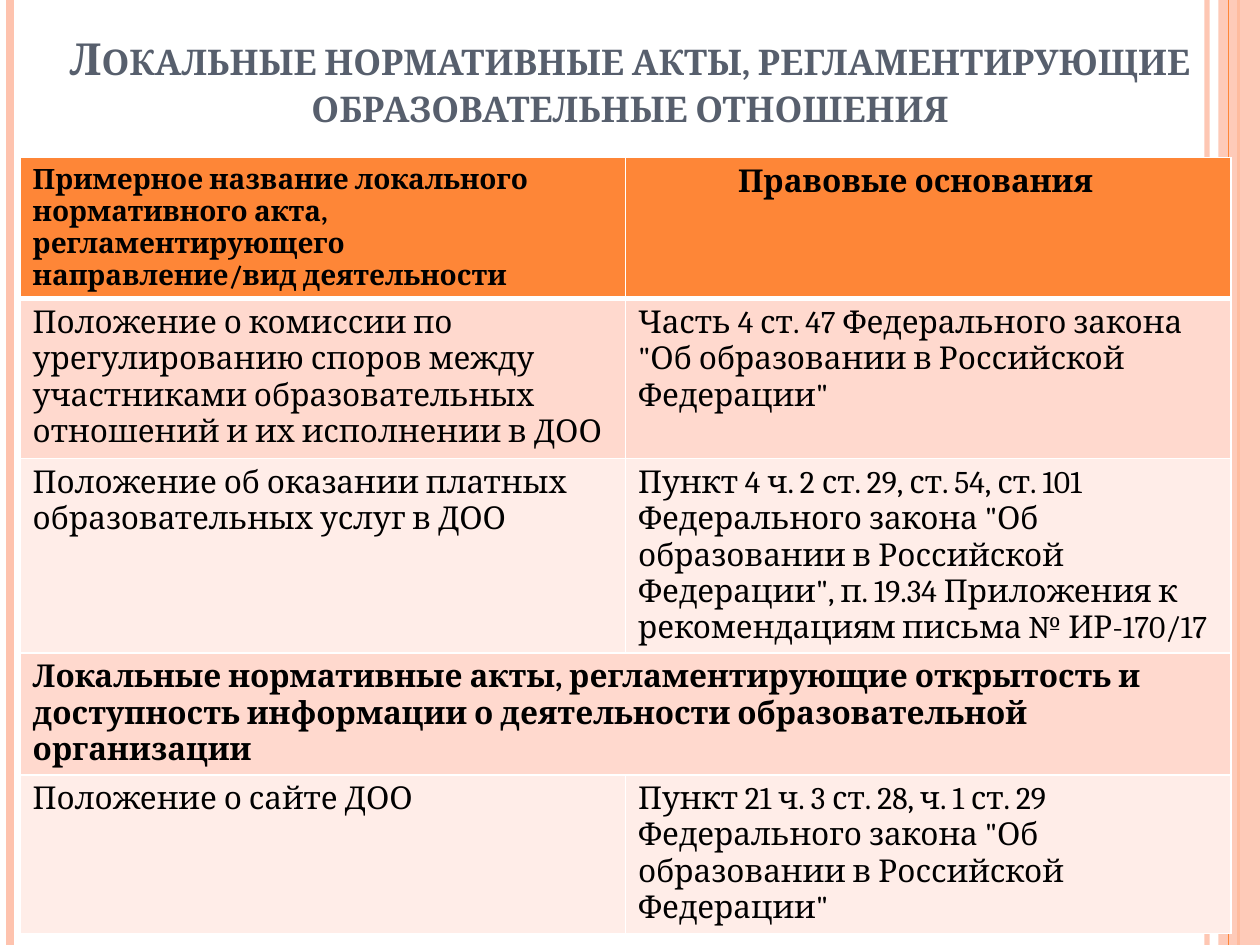
from dataclasses import dataclass
from lxml import etree
from pptx import Presentation
from pptx.dml.color import RGBColor
from pptx.enum.shapes import MSO_CONNECTOR, MSO_SHAPE
from pptx.enum.text import MSO_ANCHOR, PP_ALIGN
from pptx.oxml.ns import qn
from pptx.util import Inches, Pt

LINE = MSO_CONNECTOR.STRAIGHT
RECT = MSO_SHAPE.RECTANGLE
LOW = MSO_ANCHOR.BOTTOM
LEFT, MID = PP_ALIGN.LEFT, PP_ALIGN.CENTER
WIDE, HIGH = 10, 7.5


@dataclass(frozen=True)
class Theme:
    font: str = "Cambria"
    title: str = "575F6D"
    ink: str = "000000"
    edge: str = "FFFFFF"
    main: str = "FE8637"
    pale: str = "FEC3AE"
    odd: str = "FFD9CE"
    even: str = "FFEDE8"
    title_size: float = 25.2
    head_size: int = 16
    body_size: int = 18


THEME = Theme()

# Position, colour, width in points, opacity in percent
RAILS = [
    (9.58, THEME.pale, 3, 93),
    (0.08, THEME.pale, 4.5, 100),
    (9.83, THEME.main, 1.5, 100),
]
FRONT = (9.75, THEME.main, 0.75, 100)

TITLE = "Локальные нормативные акты, регламентирующие образовательные отношения"
HEADS = [
    "Примерное название локального нормативного акта, регламентирующего "
    "направление/вид деятельности",
    "Правовые основания",
]
ROWS = [
    ["Положение о комиссии по урегулированию споров между участниками "
     "образовательных отношений и их исполнении в ДОО",
     'Часть 4 ст. 47 Федерального закона "Об образовании в Российской Федерации"'],
    ["Положение об оказании платных образовательных услуг в ДОО",
     'Пункт 4 ч. 2 ст. 29, ст. 54, ст. 101 Федерального закона "Об образовании '
     'в Российской Федерации", п. 19.34 Приложения к рекомендациям письма '
     '№ ИР-170/17'],
    ["Локальные нормативные акты, регламентирующие открытость и доступность "
     "информации о деятельности образовательной организации"],
    ["Положение о сайте ДОО",
     'Пункт 21 ч. 3 ст. 28, ч. 1 ст. 29 Федерального закона "Об образовании '
     'в Российской Федерации"'],
]
HEIGHTS = [1.11, 1.27, 1.54, 0.96, 1.26]


def rgb(code):
    return RGBColor.from_string(code)


def style(font, size, color, bold):
    values = {"name": THEME.font, "size": Pt(size), "bold": bold}
    for key, value in values.items():
        setattr(font, key, value)
    font.color.rgb = rgb(color)


def fade(shape, share):
    """Set the opacity, in percent, of the shape's first solid colour."""
    color = next(shape.element.spPr.iter(qn("a:srgbClr")))
    etree.SubElement(color, qn("a:alpha"), val=str(share * 1000))


def add_rail(slide, x, color, width, share):
    rail = slide.shapes.add_connector(
        LINE, Inches(x), 0, Inches(x), Inches(HIGH))
    rail.line.color.rgb = rgb(color)
    rail.line.width = Pt(width)
    fade(rail, share)
    etree.SubElement(rail.element.spPr, qn("a:effectLst"))


def add_band(slide):
    left = 9.67
    band = slide.shapes.add_shape(
        RECT, Inches(left), 0, Inches(WIDE - left), Inches(HIGH))
    band.shadow.inherit = False
    band.fill.solid()
    band.fill.fore_color.rgb = rgb(THEME.pale)
    band.line.fill.background()
    fade(band, 87)


def set_title(slide):
    title = slide.shapes.title
    place = {"left": 0, "top": 0.08, "width": WIDE, "height": 1.02}
    for key, value in place.items():
        setattr(title, key, Inches(value))
    frame = title.text_frame
    frame.text = TITLE
    frame.word_wrap = True
    frame.vertical_anchor = LOW
    line = frame.paragraphs[0]
    line.alignment = MID
    line.line_spacing = 0.9
    style(line.runs[0].font, THEME.title_size, THEME.title, True)
    for props in title.element.iter(qn("a:rPr")):
        props.set("cap", "small")


def edge_cell(cell, base):
    """Draw the four borders, the bottom one base points wide."""
    props = cell._tc.get_or_add_tcPr()
    sides = {"lnL": 1, "lnR": 1, "lnT": 1, "lnB": base}
    for spot, (side, width) in enumerate(sides.items()):
        line = etree.Element(qn(f"a:{side}"), w=str(int(Pt(width))))
        fill = etree.SubElement(line, qn("a:solidFill"))
        etree.SubElement(fill, qn("a:srgbClr"), val=THEME.edge)
        props.insert(spot, line)


def fill_cell(cell, text, fill, size, bold, align=LEFT):
    cell.fill.solid()
    cell.fill.fore_color.rgb = rgb(fill)
    cell.text = text
    line = cell.text_frame.paragraphs[0]
    line.alignment = align
    style(line.runs[0].font, size, THEME.ink, bold)


def add_acts(slide):
    frame = slide.shapes.add_table(
        len(HEIGHTS), len(HEADS), Inches(0.16), Inches(1.25),
        Inches(9.61), Inches(sum(HEIGHTS)))
    table = frame.table
    for row, height in zip(table.rows, HEIGHTS):
        row.height = Inches(height)
    sizes = [THEME.head_size, THEME.body_size]
    for col, (text, size, align) in enumerate(zip(HEADS, sizes, [LEFT, MID])):
        cell = table.cell(0, col)
        fill_cell(cell, text, THEME.main, size, True, align)
        edge_cell(cell, 3)
    table.cell(0, 1).margin_right = Inches(0.3)
    for num, texts in enumerate(ROWS, 1):
        whole = len(texts) == 1
        if whole:
            table.cell(num, 0).merge(table.cell(num, 1))
        fill = THEME.odd if num % 2 else THEME.even
        for col, text in enumerate(texts):
            cell = table.cell(num, col)
            fill_cell(cell, text, fill, THEME.body_size, whole)
            edge_cell(cell, 1)


def main():
    deck = Presentation()
    deck.slide_width, deck.slide_height = Inches(WIDE), Inches(HIGH)
    slide = deck.slides.add_slide(deck.slide_layouts[5])
    for rail in RAILS:
        add_rail(slide, *rail)
    add_band(slide)
    add_rail(slide, *FRONT)
    set_title(slide)
    add_acts(slide)
    deck.save("out.pptx")


if __name__ == "__main__":
    main()
